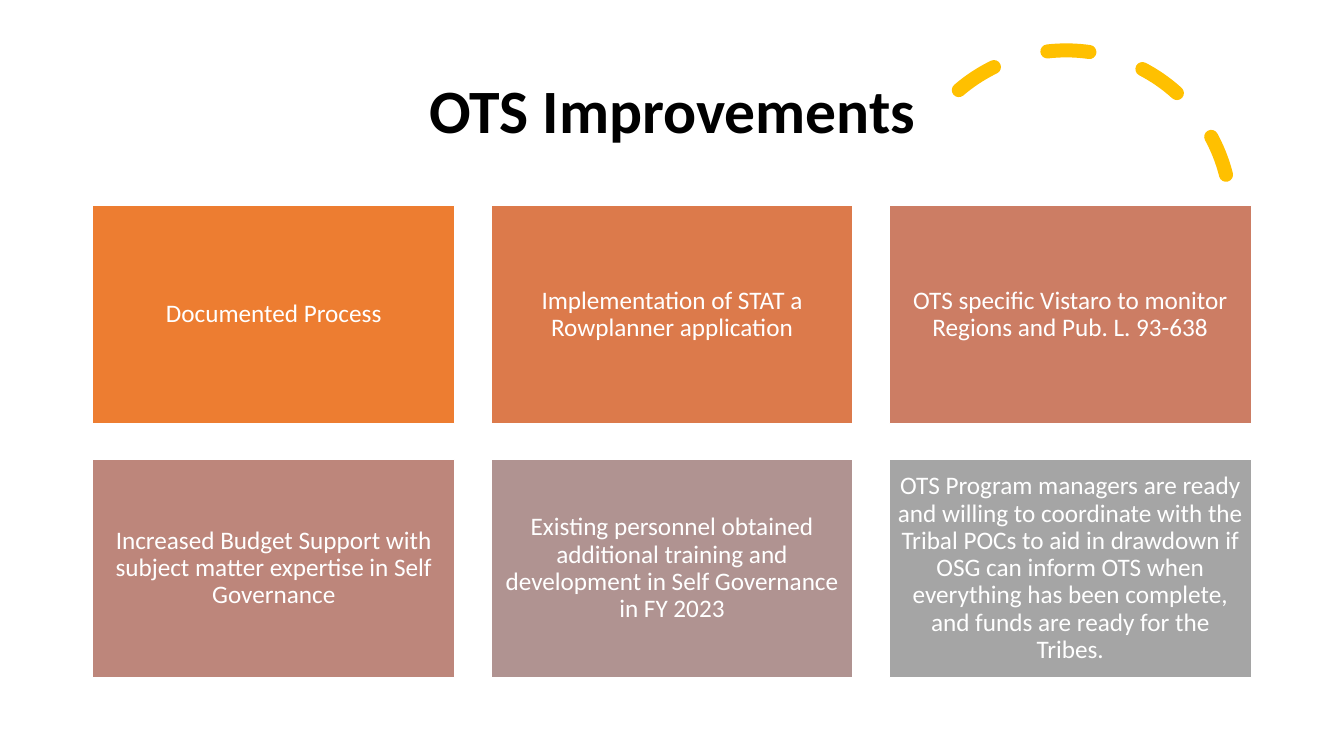
"""Build the OTS Improvements slide: a title, a dashed arc and a grid of six cards."""
from pptx import Presentation
from pptx.dml.color import RGBColor
from pptx.enum.dml import MSO_LINE
from pptx.enum.shapes import MSO_SHAPE
from pptx.enum.text import MSO_ANCHOR, PP_ALIGN
from pptx.oxml.ns import qn
from pptx.util import Inches, Pt

ARC, RECTANGLE = MSO_SHAPE.ARC, MSO_SHAPE.RECTANGLE
MIDDLE, CENTER = MSO_ANCHOR.MIDDLE, PP_ALIGN.CENTER
DASH = MSO_LINE.DASH

COLUMNS = 3
LEFT, TOP = 0.92, 2.04
CARD_WIDTH, CARD_HEIGHT = 3.59, 2.16
GAP = 0.36
INSET = Inches(0.07)
CARDS = [
    ("Documented Process", "ED7D31"),
    ("Implementation of STAT a Rowplanner application", "DC7A4B"),
    ("OTS specific Vistaro to monitor Regions and Pub. L. 93-638", "CC7D64"),
    ("Increased Budget Support with subject matter expertise in Self Governance", "BD867B"),
    ("Existing personnel obtained additional training and development "
     "in Self Governance in FY 2023", "B09391"),
    ("OTS Program managers are ready and willing to coordinate with the Tribal POCs "
     "to aid in drawdown if OSG can inform OTS when everything has been complete, "
     "and funds are ready for the Tribes.", "A5A5A5"),
]


def color(value):
    return RGBColor.from_string(value)


def write(frame, text, size, ink, bold=False):
    frame.text = text
    frame.word_wrap = True
    frame.vertical_anchor = MIDDLE
    para = frame.paragraphs[0]
    para.alignment = CENTER
    para.line_spacing = 0.9
    font = para.runs[0].font
    font.name = "Calibri"
    font.size = Pt(size)
    font.bold = bold
    font.color.rgb = color(ink)


deck = Presentation()
deck.slide_width, deck.slide_height = Inches(13.33), Inches(7.5)
page = deck.slides.add_slide(deck.slide_layouts[5])

title = page.shapes.title
title.left, title.top = Inches(LEFT), Inches(0.4)
title.width, title.height = Inches(11.5), Inches(1.45)
write(title.text_frame, "OTS Improvements", 44, "000000", bold=True)

arc = page.shapes.add_shape(ARC, Inches(8.94), Inches(0.5), Inches(3.27), Inches(3.27))
arc.shadow.inherit = False
arc.rotation = 345.8
arc.adjustments[0] = 146.13
arc.adjustments[1] = 0
arc.fill.background()
arc.line.color.rgb = color("FFC000")
arc.line.width = Pt(10)
arc.line.dash_style = DASH
arc.element.spPr.find(qn("a:ln")).set("cap", "rnd")

for index, (text, fill) in enumerate(CARDS):
    row, column = divmod(index, COLUMNS)
    card = page.shapes.add_shape(
        RECTANGLE,
        Inches(LEFT + column * (CARD_WIDTH + GAP)),
        Inches(TOP + row * (CARD_HEIGHT + GAP)),
        Inches(CARD_WIDTH),
        Inches(CARD_HEIGHT),
    )
    card.shadow.inherit = False
    card.fill.solid()
    card.fill.fore_color.rgb = color(fill)
    card.line.color.rgb = color("FFFFFF")
    card.line.width = Pt(1)
    frame = card.text_frame
    frame.margin_left = frame.margin_right = INSET
    frame.margin_top = frame.margin_bottom = INSET
    write(frame, text, 18, "FFFFFF")

deck.save("out.pptx")
